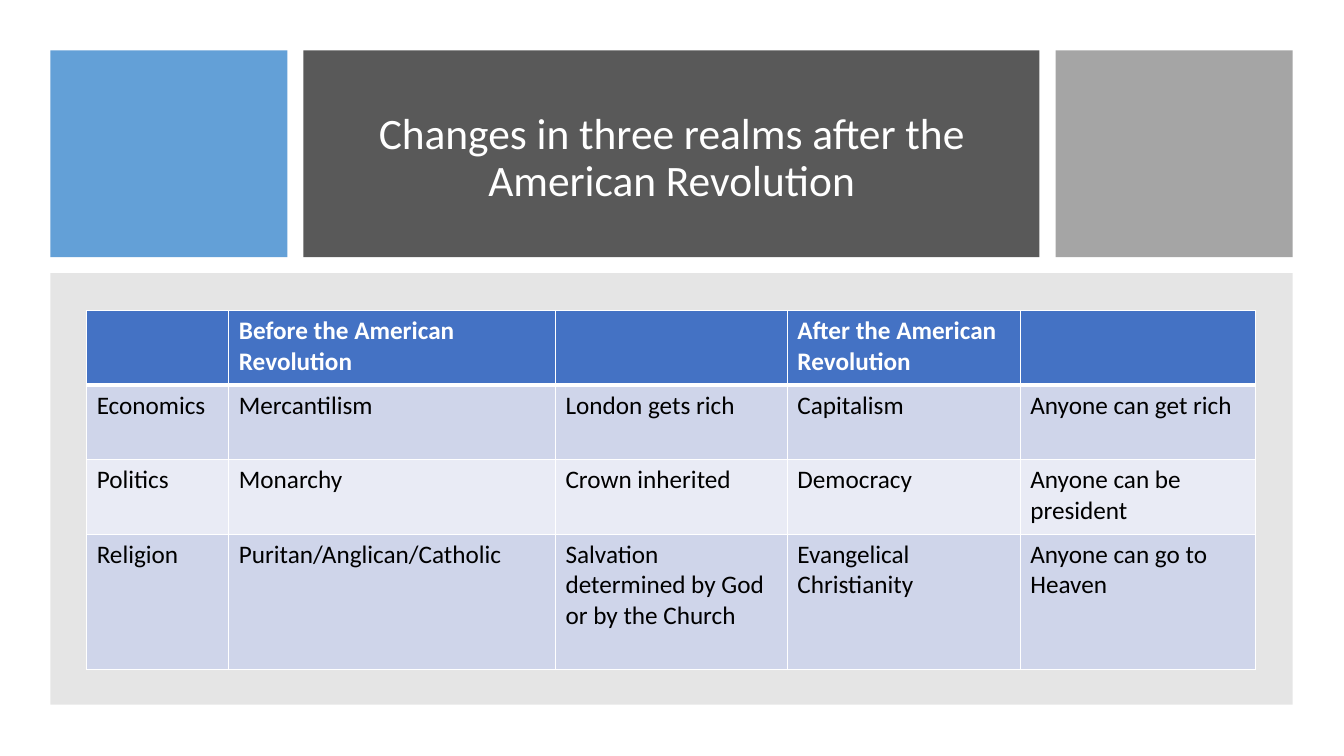
from typing import NamedTuple

from lxml import etree
from pptx import Presentation
from pptx.dml.color import RGBColor
from pptx.enum.shapes import MSO_SHAPE
from pptx.enum.text import MSO_ANCHOR, MSO_AUTO_SIZE, PP_ALIGN
from pptx.oxml.ns import qn
from pptx.util import Inches, Pt

RECTANGLE = MSO_SHAPE.RECTANGLE
MIDDLE = MSO_ANCHOR.MIDDLE
NO_AUTOFIT = MSO_AUTO_SIZE.NONE
CENTER = PP_ALIGN.CENTER
LEFT = PP_ALIGN.LEFT

WHITE = RGBColor(0xFF, 0xFF, 0xFF)
BLACK = RGBColor(0x00, 0x00, 0x00)
SKY = RGBColor(0x5B, 0x9B, 0xD5)
CHARCOAL = RGBColor(0x59, 0x59, 0x59)
SILVER = RGBColor(0xA5, 0xA5, 0xA5)
GRAY = RGBColor(0x80, 0x80, 0x80)
HEADER_BLUE = RGBColor(0x44, 0x72, 0xC4)
BAND_DARK = RGBColor(0xCF, 0xD5, 0xEA)
BAND_LIGHT = RGBColor(0xE9, 0xEB, 0xF5)

FONT = "Calibri"
SLIDE_WIDTH, SLIDE_HEIGHT = 13.33, 7.5
MARGIN, GAP = 0.5, 0.16
GRID_COLUMNS = (2.35, 7.3, 2.35)
GRID_ROWS = (2.05, 4.28)

TABLE_COLUMNS = (1.41, 3.24, 2.3, 2.31, 2.33)
TABLE_ROWS = (0.74, 0.74, 0.74, 1.34)
TABLE_TEXT = (
    ("", "Before the American Revolution", "", "After the American Revolution", ""),
    ("Economics", "Mercantilism", "London gets rich", "Capitalism", "Anyone can get rich"),
    ("Politics", "Monarchy", "Crown inherited", "Democracy", "Anyone can be president"),
    (
        "Religion",
        "Puritan/Anglican/Catholic",
        "Salvation determined by God or by the Church",
        "Evangelical Christianity",
        "Anyone can go to Heaven",
    ),
)


class Box(NamedTuple):
    left: float
    top: float
    width: float
    height: float

    def inset(self, horizontal: float, top: float, bottom: float) -> "Box":
        return Box(
            self.left + horizontal,
            self.top + top,
            self.width - 2 * horizontal,
            self.height - top - bottom,
        )

    def lengths(self) -> list[int]:
        return [Inches(value) for value in self]


class Panel(NamedTuple):
    column: int
    row: int
    span: int
    color: RGBColor
    opacity: int = 100


PANELS = (
    Panel(0, 0, 1, SKY, 95),
    Panel(1, 0, 1, CHARCOAL),
    Panel(2, 0, 1, SILVER),
    Panel(0, 1, 3, GRAY, 20),
)


def grid_box(column: int, row: int, span: int = 1) -> Box:
    return Box(
        MARGIN + sum(GRID_COLUMNS[:column]) + GAP * column,
        MARGIN + sum(GRID_ROWS[:row]) + GAP * row,
        sum(GRID_COLUMNS[column:column + span]) + GAP * (span - 1),
        GRID_ROWS[row],
    )


def write_text(text_frame, text: str, *, size: float, color: RGBColor,
               bold: bool = False, align=LEFT, spacing: float = 1.0) -> None:
    paragraph = text_frame.paragraphs[0]
    paragraph.alignment = align
    paragraph.line_spacing = spacing
    paragraph.font.size = Pt(size)
    if text:
        run = paragraph.add_run()
        run.text = text
        run.font.name = FONT
        run.font.size = Pt(size)
        run.font.bold = bold
        run.font.color.rgb = color


def draw_panel(slide, panel: Panel) -> None:
    box = grid_box(panel.column, panel.row, panel.span)
    shape = slide.shapes.add_shape(RECTANGLE, *box.lengths())
    shape.shadow.inherit = False
    shape.line.fill.background()
    shape.fill.solid()
    shape.fill.fore_color.rgb = panel.color
    if panel.opacity < 100:
        color = shape.element.spPr.find(f"{qn('a:solidFill')}/{qn('a:srgbClr')}")
        etree.SubElement(color, qn("a:alpha"), val=str(panel.opacity * 1000))


def draw_title(slide) -> None:
    title = slide.shapes.title
    title.left, title.top, title.width, title.height = grid_box(1, 0).inset(0.32, 0.3, 0.19).lengths()
    title.text_frame.word_wrap = True
    title.text_frame.auto_size = NO_AUTOFIT
    title.text_frame.vertical_anchor = MIDDLE
    write_text(title.text_frame, "Changes in three realms after the American Revolution",
               size=31, color=WHITE, align=CENTER, spacing=0.9)
    title.element.getparent().append(title.element)


def add_borders(cell, top: float, bottom: float) -> None:
    properties = cell._tc.get_or_add_tcPr()
    for side, width in (("L", 1), ("R", 1), ("T", top), ("B", bottom)):
        line = etree.SubElement(properties, qn(f"a:ln{side}"), w=str(Pt(width)))
        fill = etree.SubElement(line, qn("a:solidFill"))
        etree.SubElement(fill, qn("a:srgbClr"), val=str(WHITE))


def draw_table(slide) -> None:
    box = grid_box(0, 1, 3).inset(0.36, 0.37, 0.36)
    frame = slide.shapes.add_table(len(TABLE_ROWS), len(TABLE_COLUMNS), *box.lengths())
    table = frame.table
    for column, width in zip(table.columns, TABLE_COLUMNS):
        column.width = Inches(width)
    for row, height in zip(table.rows, TABLE_ROWS):
        row.height = Inches(height)
    for row_index, texts in enumerate(TABLE_TEXT):
        header = row_index == 0
        band = HEADER_BLUE if header else BAND_DARK if row_index % 2 else BAND_LIGHT
        for column_index, text in enumerate(texts):
            cell = table.cell(row_index, column_index)
            add_borders(cell, top=3 if row_index == 1 else 1, bottom=3 if header else 1)
            cell.fill.solid()
            cell.fill.fore_color.rgb = band
            write_text(cell.text_frame, text, size=18,
                       color=WHITE if header else BLACK, bold=header)


def main() -> None:
    presentation = Presentation()
    presentation.slide_width = Inches(SLIDE_WIDTH)
    presentation.slide_height = Inches(SLIDE_HEIGHT)
    slide = presentation.slides.add_slide(presentation.slide_layouts.get_by_name("Title Only"))
    for panel in PANELS:
        draw_panel(slide, panel)
    draw_title(slide)
    draw_table(slide)
    presentation.save("out.pptx")


if __name__ == "__main__":
    main()
